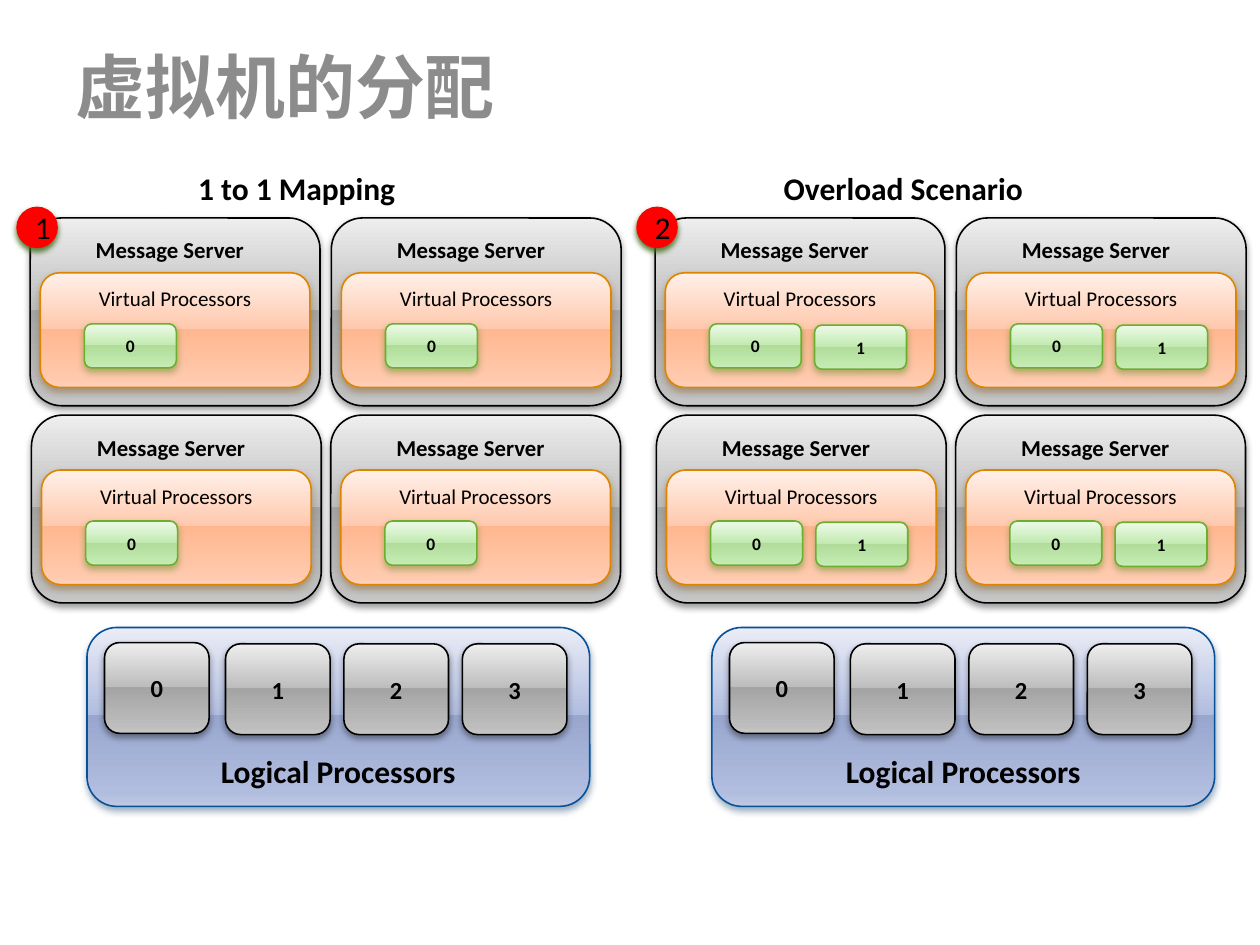
"""Build a slide comparing one-to-one and overloaded virtual machine allocation."""
from pptx import Presentation
from pptx.dml.color import RGBColor
from pptx.enum.shapes import MSO_SHAPE
from pptx.enum.text import MSO_ANCHOR, PP_ALIGN
from pptx.oxml import parse_xml
from pptx.oxml.ns import nsdecls, qn
from pptx.util import Inches, Pt

deck = Presentation()
deck.slide_width, deck.slide_height = Inches(10), Inches(7.5)
column, row = deck.slide_width // 100, deck.slide_height // 75
page = deck.slides.add_slide(deck.slide_layouts[6])

stop_places = (0, 49, 49, 92, 100)
gray = dict(fills="EEEEEE BDBDBD A4A4A4 BDBDBD C8C8C8", line="000000", shadow="000000")
orange = dict(fills="FFF0E9 FFC9AD FFB78F FFC9AD FFD1BA", line="DE8400", shadow="844E00")
green = dict(fills="EEFAE9 C2EAB0 B0DC9A C2EAB0 CDEBBE", line="6CAE30", shadow="3F7A0A")
blue = dict(fills="EAEDF7 B1BDDF 99A7CF B1BDDF BFC8E3", line="075198", shadow="00305E")
red = dict(fills="FF0000", line=None, shadow="436B1E", strength=83, blur=3.1)


def add_box(shapes, left, top, width, height, kind=MSO_SHAPE.ROUNDED_RECTANGLE,
            fills=None, line=None, shadow=None, strength=38, blur=4):
    place = (round(left * column), round(top * row), round(width * column), round(height * row))
    if fills is None:
        return shapes.add_textbox(*place)
    box = shapes.add_shape(kind, *place)
    colors = fills.split()
    if len(colors) == 1:
        box.fill.solid()
        box.fill.fore_color.rgb = RGBColor.from_string(fills)
    else:
        box.fill.gradient()
        box.fill.gradient_angle = 270
        stops = box.element.spPr.find(qn("a:gradFill")).find(qn("a:gsLst"))
        stops[:] = [
            parse_xml(f'<a:gs {nsdecls("a")} pos="{place * 1000}"><a:srgbClr val="{color}"/></a:gs>')
            for place, color in zip(stop_places, colors)]
    if line:
        box.line.color.rgb = RGBColor.from_string(line)
        box.line.width = Pt(0.9)
    else:
        box.line.fill.background()
    box.shadow.inherit = False
    box.element.spPr.find(qn("a:effectLst")).append(parse_xml(
        f'<a:outerShdw {nsdecls("a")} blurRad="{Pt(blur)}" dist="{Pt(2)}" dir="5400000" '
        f'rotWithShape="0"><a:srgbClr val="{shadow}"><a:alpha val="{strength * 1000}"/>'
        '</a:srgbClr></a:outerShdw>'))
    return box


def write(box, text, size, bold=True, color="000000", align=PP_ALIGN.CENTER,
          anchor=MSO_ANCHOR.MIDDLE, inset=0.1, wrap=True):
    frame = box.text_frame
    frame.word_wrap = wrap
    frame.vertical_anchor = anchor
    frame.margin_left = frame.margin_right = Inches(inset)
    frame.margin_top = frame.margin_bottom = Inches(inset / 2)
    para = frame.paragraphs[0]
    para.alignment = align
    span = para.add_run()
    span.text = text
    span.font.name, span.font.size, span.font.bold = "Calibri", Pt(size), bold
    span.font.color.rgb = RGBColor.from_string(color)


write(add_box(page.shapes, 5, 3, 90, 12.5), "虚拟机的分配", 40, color="8C8C8C",
      align=PP_ALIGN.LEFT, anchor=MSO_ANCHOR.TOP)

scenarios = [
    ("1", "1 to 1 Mapping", 0, 14.8, 17.5, 1.3, 1),
    ("2", "Overload Scenario", 49.6, 61.3, 20.8, 50.5, 2),
]
server_places = [(2.4, 17.3), (26.3, 17.3), (2.5, 32.95), (26.25, 32.95)]
virtual_places = [(4.3, 8.4), (12.65, 8.5)]
logical_places = [(8.3, 51), (17.9, 51.1), (27.3, 51.1), (36.7, 51.1)]

for number, heading, offset, heading_left, heading_width, badge_left, virtual_count in scenarios:
    write(add_box(page.shapes, heading_left, 13, heading_width, 3.9), heading, 18,
          anchor=MSO_ANCHOR.TOP, inset=0.08, wrap=False)

    for server_left, top in server_places:
        left = offset + server_left
        server = page.shapes.add_group_shape().shapes
        add_box(server, left, top, 23, 14.9, **gray)
        write(add_box(server, left + 4, top + 0.85, 15, 3.4), "Message Server", 13,
              align=PP_ALIGN.LEFT, anchor=MSO_ANCHOR.TOP, inset=0.12)
        write(add_box(server, left + 0.8, top + 4.35, 21.4, 9.1, **orange),
              "Virtual Processors", 12, bold=False, anchor=MSO_ANCHOR.TOP, inset=0.12)
        for index, (across, down) in enumerate(virtual_places[:virtual_count]):
            write(add_box(server, left + across, top + down, 7.3, 3.5, **green), str(index), 10)

    write(add_box(page.shapes, offset + 6.9, 49.8, 39.9, 14.2, **blue),
          "Logical Processors", 18, anchor=MSO_ANCHOR.BOTTOM, inset=0.12)
    for index, (left, top) in enumerate(logical_places):
        write(add_box(page.shapes, offset + left, top, 8.3, 7.2, **gray), str(index), 14)

    write(add_box(page.shapes, badge_left, 16.4, 3.3, 3.3, kind=MSO_SHAPE.OVAL, **red),
          number, 18, bold=False)

deck.save("out.pptx")
